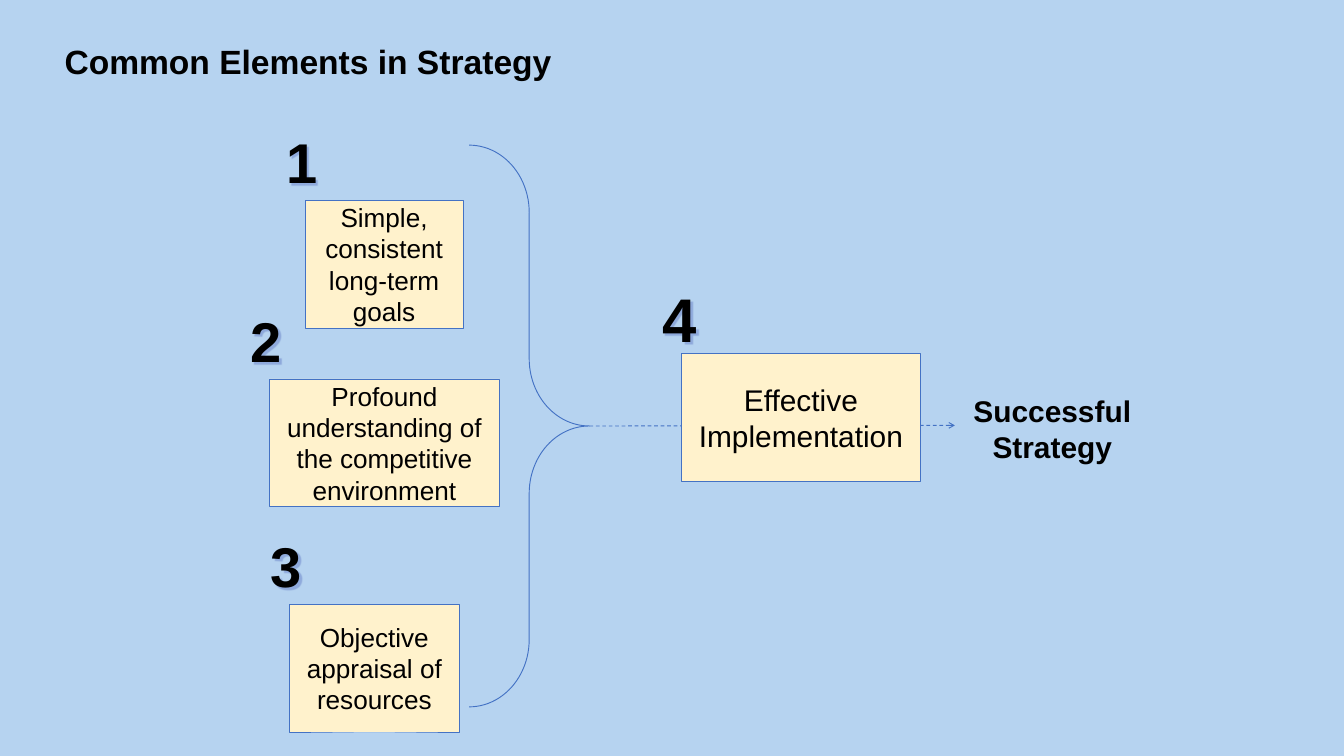
from dataclasses import dataclass

from lxml.etree import SubElement
from pptx import Presentation
from pptx.dml.color import RGBColor
from pptx.enum.dml import MSO_LINE
from pptx.enum.shapes import MSO_CONNECTOR, MSO_SHAPE
from pptx.enum.text import MSO_ANCHOR, MSO_AUTO_SIZE, PP_ALIGN
from pptx.oxml import parse_xml
from pptx.oxml.ns import nsdecls, qn
from pptx.util import Inches, Pt


@dataclass(frozen=True)
class Theme:
    """Colours, font and type sizes of the slide."""

    face: str = "Arial"
    back: str = "B6D3F0"
    box: str = "FFF2CC"
    line: str = "4472C4"
    ink: str = "000000"
    edge: str = "F4F5FA"
    glow: str = "8FAADC"
    title: int = 36
    goal: int = 28
    result: int = 32
    badge: int = 60
    large: int = 66


THEME = Theme()
COLS, ROWS = 20, 11.25
UNIT = Inches(1)
TALL = 1.9
STEPS = [
    ("1", ["Simple, consistent long-term", "goals"], 4.54, 2.98, 2.35),
    ("2", ["Profound understanding of the competitive environment"], 4.01, 5.64, 3.42),
    ("3", ["Objective appraisal of resources"], 4.31, 8.99, 2.52),
]


def grid(*cells):
    """Turn grid columns and rows into lengths."""
    return [round(cell * UNIT) for cell in cells]


def tint(code):
    """Turn a hex code into a colour."""
    return RGBColor.from_string(code)


def write(frame, lines, size, bold=False, align=None):
    """Fill a text frame with evenly styled paragraphs."""
    frame.word_wrap = True
    frame.text = "\n".join(lines)
    for para in frame.paragraphs:
        para.alignment = align
        para.font.name = THEME.face
        para.font.size = Pt(size)
        para.font.bold = bold
        para.font.color.rgb = tint(THEME.ink)


def stroke(line, width):
    """Colour a line and set its width in points."""
    line.color.rgb = tint(THEME.line)
    line.width = Pt(width)


def add_title(slide, text):
    """Place and fill the title."""
    title = slide.shapes.title
    title.left, title.top, title.width, title.height = grid(0.86, 0.64, 17.81, 0.62)
    write(title.text_frame, [text], THEME.title, True, PP_ALIGN.LEFT)
    title.text_frame.vertical_anchor = MSO_ANCHOR.BOTTOM
    title.text_frame.paragraphs[0].line_spacing = 0.9


def add_label(shapes, cells, text, size, align=None):
    """Add a bold text box that grows with its text."""
    label = shapes.add_textbox(*grid(*cells))
    write(label.text_frame, [text], size, True, align)
    label.text_frame.auto_size = MSO_AUTO_SIZE.SHAPE_TO_FIT_TEXT
    return label


def add_badge(shapes, left, top, tall, mark, size):
    """Add a spaced, outlined number with a soft shadow."""
    badge = add_label(shapes, (left, top, 0.75, tall), mark, size)
    props = badge.text_frame.paragraphs[0].runs[0]._r.get_or_add_rPr()
    props.set("spc", "450")
    props.append(parse_xml(
        f'<a:ln {nsdecls("a")} w="{Pt(0.9)}"><a:solidFill>'
        f'<a:srgbClr val="{THEME.edge}"/></a:solidFill></a:ln>'))
    badge._element.spPr.append(parse_xml(
        f'<a:effectLst {nsdecls("a")}><a:outerShdw blurRad="12700" dist="38100" '
        f'dir="2700000"><a:srgbClr val="{THEME.glow}"/></a:outerShdw></a:effectLst>'))


def add_step(slide, mark, lines, left, top, wide, size, big, tall):
    """Add a group of a text box and the number above its corner."""
    group = slide.shapes.add_group_shape().shapes
    box = group.add_shape(MSO_SHAPE.RECTANGLE, *grid(left, top, wide, TALL))
    box.shadow.inherit = False
    box.fill.solid()
    box.fill.fore_color.rgb = tint(THEME.box)
    stroke(box.line, 0.5)
    write(box.text_frame, lines, size, align=PP_ALIGN.CENTER)
    box.text_frame.vertical_anchor = MSO_ANCHOR.MIDDLE
    add_badge(group, left - 0.38, top - 1.13, tall, mark, big)


def add_brace(slide):
    """Add the brace that joins the first steps."""
    brace = slide.shapes.add_shape(MSO_SHAPE.RIGHT_BRACE, *grid(6.98, 2.16, 1.79, 8.36))
    brace.adjustments[0] = 0.56
    brace.adjustments[1] = 0.5
    brace.shadow.inherit = False
    brace.fill.background()
    stroke(brace.line, 1)


def add_arrow(slide):
    """Add the dashed arrow from the brace to the result."""
    arrow = slide.shapes.add_connector(
        MSO_CONNECTOR.STRAIGHT, *grid(8.77, 6.34, 14.21, 6.33))
    stroke(arrow.line, 1)
    arrow.line.dash_style = MSO_LINE.DASH
    SubElement(arrow.line._get_or_add_ln(), qn("a:tailEnd"), type="arrow")
    SubElement(arrow._element.spPr, qn("a:effectLst"))


def main():
    """Build and save the slide."""
    deck = Presentation()
    deck.slide_width, deck.slide_height = grid(COLS, ROWS)
    slide = deck.slides.add_slide(deck.slide_layouts[5])
    slide.background.fill.solid()
    slide.background.fill.fore_color.rgb = tint(THEME.back)
    add_title(slide, "Common Elements in Strategy")
    add_arrow(slide)
    for step in STEPS:
        add_step(slide, *step, THEME.goal, THEME.badge, 1.11)
    add_brace(slide)
    add_step(slide, "4", ["Effective Implementation"], 10.14, 5.26, 3.56,
             THEME.result, THEME.large, 1.21)
    add_label(slide.shapes, (14.09, 5.79, 3.14, 1.18), "Successful Strategy",
              THEME.result, PP_ALIGN.CENTER)
    deck.save("out.pptx")


if __name__ == "__main__":
    main()
